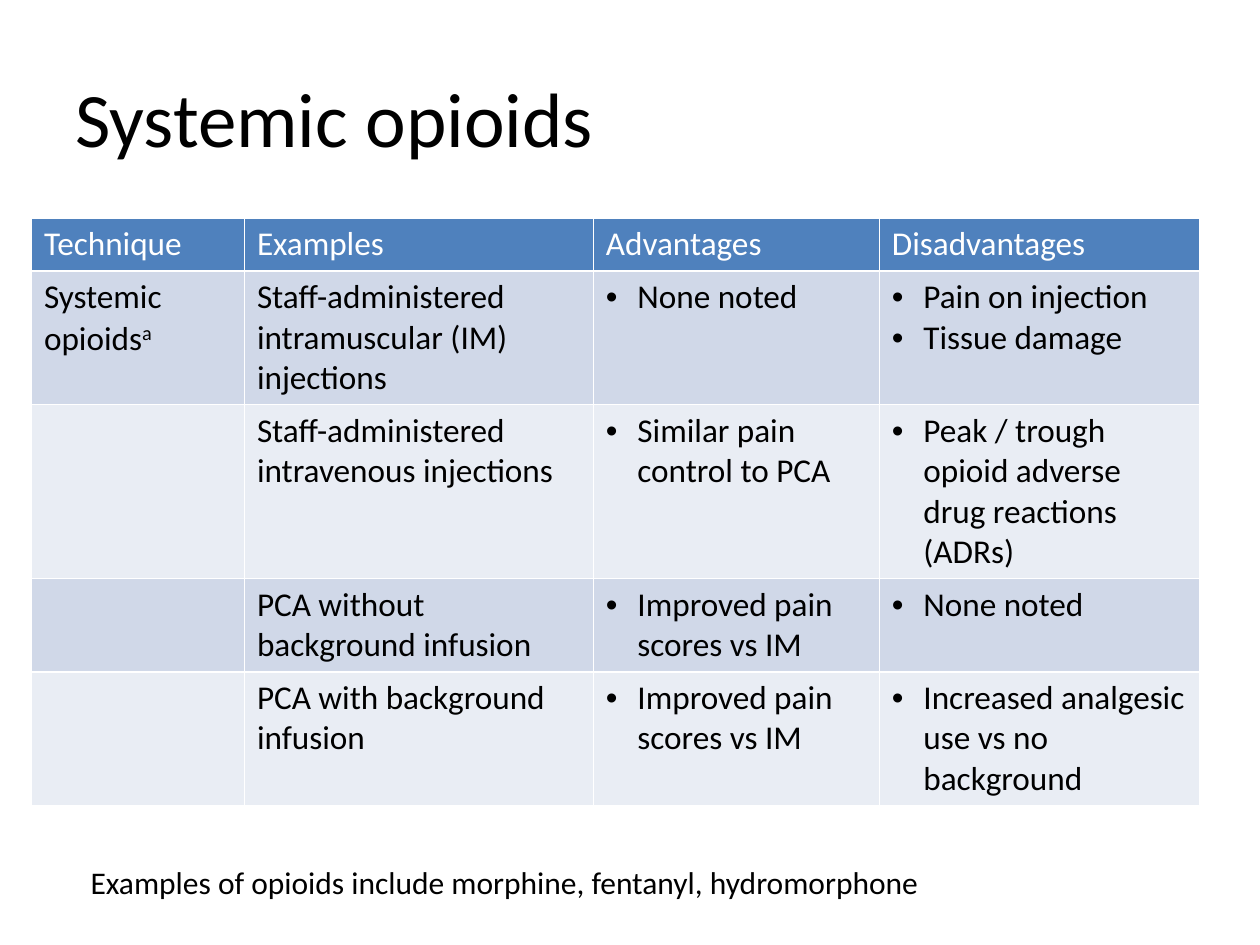
"""Build a slide with a table comparing systemic opioid techniques."""
from dataclasses import dataclass

from lxml.etree import SubElement
from pptx import Presentation
from pptx.dml.color import RGBColor
from pptx.enum.text import MSO_ANCHOR as Anchor
from pptx.oxml import parse_xml
from pptx.oxml.ns import nsdecls, qn
from pptx.util import Inches, Pt

FONT = "Calibri"
BLACK = RGBColor(0x00, 0x00, 0x00)
WHITE = RGBColor(0xFF, 0xFF, 0xFF)
HEADER_BLUE = RGBColor(0x4F, 0x81, 0xBD)
BAND_DARK = RGBColor(0xD0, 0xD8, 0xE8)
BAND_LIGHT = RGBColor(0xE9, 0xED, 0xF4)
COLUMN_WIDTHS = (1.69, 2.77, 2.27, 2.54)
HEADERS = ("Technique", "Examples", "Advantages", "Disadvantages")
TABLE_SIZE = 19


@dataclass(frozen=True)
class Label:
    text: str
    left: float
    top: float
    width: float
    height: float
    size: int
    anchor: Anchor


@dataclass(frozen=True)
class Option:
    height: float
    example: str
    advantages: tuple[str, ...]
    disadvantages: tuple[str, ...]
    technique: str = ""
    footnote: str = ""


LABELS = (
    Label("Systemic opioids", 0.5, 0.3, 9, 1.25, 44, Anchor.MIDDLE),
    Label("Examples of opioids include morphine, fentanyl, hydromorphone",
          0.62, 6.8, 8.05, 0.4, 18, Anchor.TOP),
)
OPTIONS = (
    Option(1.06, "Staff-administered intramuscular (IM) injections",
           ("None noted",), ("Pain on injection", "Tissue damage"),
           "Systemic opioids", "a"),
    Option(1.38, "Staff-administered intravenous injections",
           ("Similar pain control to PCA",),
           ("Peak / trough opioid adverse drug reactions (ADRs)",)),
    Option(0.74, "PCA without background infusion",
           ("Improved pain scores vs IM",), ("None noted",)),
    Option(1.06, "PCA with background infusion",
           ("Improved pain scores vs IM",),
           ("Increased analgesic use vs no background",)),
)
HEADER_HEIGHT = 0.41


def add_span(para, text: str, size: float, color: RGBColor = BLACK):
    span = para.add_run()
    span.text = text
    span.font.name = FONT
    span.font.size = Pt(size)
    span.font.bold = False
    span.font.color.rgb = color
    return span


def add_label(page, label: Label) -> None:
    box = page.shapes.add_textbox(Inches(label.left), Inches(label.top),
                                  Inches(label.width), Inches(label.height))
    frame = box.text_frame
    frame.word_wrap = True
    frame.vertical_anchor = label.anchor
    add_span(frame.paragraphs[0], label.text, label.size)


def style_cell(cell, color: RGBColor) -> None:
    cell.fill.solid()
    cell.fill.fore_color.rgb = color
    properties = cell._tc.get_or_add_tcPr()
    for index, side in enumerate(("lnL", "lnR", "lnT", "lnB")):
        properties.insert(index, parse_xml(
            f'<a:{side} {nsdecls("a")} w="{Pt(1)}"><a:solidFill>'
            f'<a:srgbClr val="{WHITE}"/></a:solidFill></a:{side}>'))


def add_bullets(cell, items: tuple[str, ...]) -> None:
    frame = cell.text_frame
    for index, item in enumerate(items):
        para = frame.add_paragraph() if index else frame.paragraphs[0]
        properties = para._p.get_or_add_pPr()
        properties.set("marL", str(Inches(0.25)))
        properties.set("indent", str(Inches(-0.25)))
        SubElement(properties, qn("a:buFont")).set("typeface", "Arial")
        SubElement(properties, qn("a:buChar")).set("char", "•")
        add_span(para, item, TABLE_SIZE)


def fill_option(cells, option: Option, band: RGBColor) -> None:
    for cell in cells:
        style_cell(cell, band)
    technique, example, advantages, disadvantages = cells
    para = technique.text_frame.paragraphs[0]
    if option.technique:
        add_span(para, option.technique, TABLE_SIZE)
    if option.footnote:
        note = add_span(para, option.footnote, 20)
        note.font._element.set("baseline", "30000")
    add_span(example.text_frame.paragraphs[0], option.example, TABLE_SIZE)
    add_bullets(advantages, option.advantages)
    add_bullets(disadvantages, option.disadvantages)


def add_option_table(page) -> None:
    heights = (HEADER_HEIGHT, *(option.height for option in OPTIONS))
    table = page.shapes.add_table(
        len(heights), len(HEADERS), Inches(0.25), Inches(1.73),
        Inches(sum(COLUMN_WIDTHS)), Inches(sum(heights))).table
    for column, width in zip(table.columns, COLUMN_WIDTHS):
        column.width = Inches(width)
    for row, height in zip(table.rows, heights):
        row.height = Inches(height)
    for cell, header in zip(table.rows[0].cells, HEADERS):
        style_cell(cell, HEADER_BLUE)
        add_span(cell.text_frame.paragraphs[0], header, TABLE_SIZE, WHITE)
    for index, option in enumerate(OPTIONS):
        band = BAND_LIGHT if index % 2 else BAND_DARK
        fill_option(tuple(table.rows[index + 1].cells), option, band)


def main() -> None:
    deck = Presentation()
    deck.slide_width, deck.slide_height = Inches(10), Inches(7.5)
    page = deck.slides.add_slide(deck.slide_layouts[6])
    add_option_table(page)
    for label in LABELS:
        add_label(page, label)
    deck.save("out.pptx")


if __name__ == "__main__":
    main()
